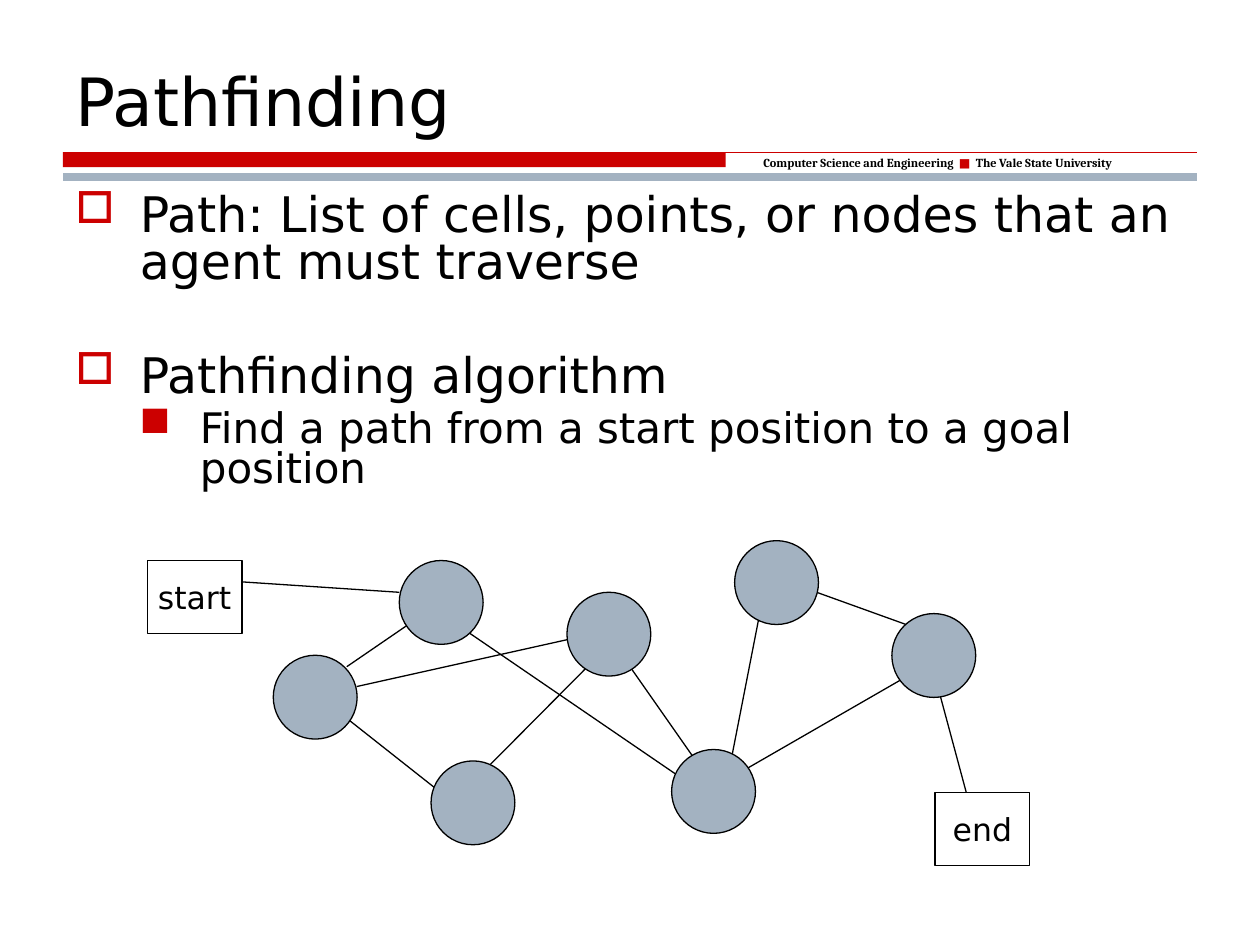
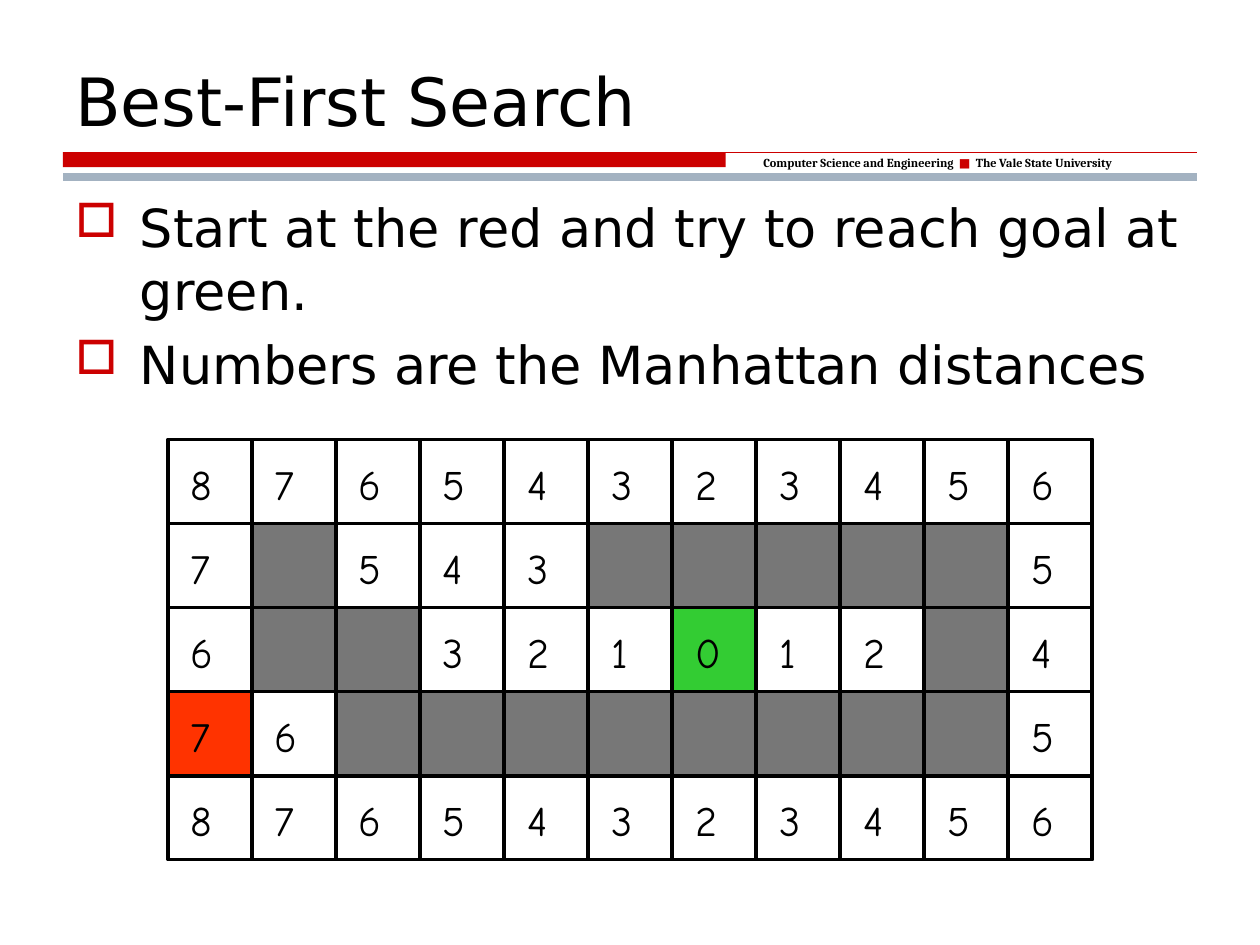
from dataclasses import dataclass

from lxml.etree import SubElement
from pptx import Presentation
from pptx.dml.color import RGBColor
from pptx.enum.shapes import MSO_CONNECTOR, MSO_SHAPE
from pptx.enum.text import MSO_ANCHOR, PP_ALIGN
from pptx.oxml.ns import qn
from pptx.util import Cm, Pt

BLACK = RGBColor(0x00, 0x00, 0x00)
RED = RGBColor(0xCC, 0x00, 0x00)
STEEL = RGBColor(0xA3, 0xB2, 0xC1)
WALL_GRAY = RGBColor(0x77, 0x77, 0x77)
START_RED = RGBColor(0xFF, 0x33, 0x00)
GOAL_GREEN = RGBColor(0x33, 0xCC, 0x33)

SANS = "DejaVu Sans"
SERIF = "Cambria"
COMIC = "Comic Neue"

LEFT, RIGHT = 1.27, 24.13
WIDTH = RIGHT - LEFT
BAND_TOP = 3.07
NODE_SIZE = 1.69
LABEL_W, LABEL_H = 1.91, 1.47

GRID_LEFT, GRID_TOP = 3.39, 8.86
CELL = 18.63 / 11
GRID_LINE = 2.25
DISTANCES = (
    "87654323456",
    "7#543#####5",
    "6##321012#4",
    "76########5",
    "87654323456",
)
START_CELL = (0, 3)
GOAL_CELL = (6, 2)


@dataclass(frozen=True)
class Level:
    margin: float
    hanging: float
    char: str
    bullet_pct: int


@dataclass(frozen=True)
class Item:
    text: str
    size: int
    level: Level
    before: float
    spacing: float = 1.0


@dataclass(frozen=True)
class Edge:
    x1: float
    y1: float
    x2: float
    y2: float


@dataclass(frozen=True)
class Point:
    x: float
    y: float


@dataclass(frozen=True)
class Label:
    text: str
    x: float
    y: float


TOPIC = Level(1.3, 1.3, "□", 90)
DETAIL = Level(2.51, 1.22, "■", 100)

PATH_ITEMS = (
    Item("Path: List of cells, points, or nodes that an agent must traverse", 28, TOPIC, 5.6, 0.8),
    Item("Pathfinding algorithm", 28, TOPIC, 38, 0.8),
    Item("Find a path from a start position to a goal position", 24, DETAIL, 4.8, 0.8),
)
SEARCH_ITEMS = (
    Item("Start at the red and try to reach goal at green.", 30, TOPIC, 6),
    Item("Numbers are the Manhattan distances", 30, TOPIC, 6),
)
EDGES = (
    Edge(4.88, 11.73, 8.05, 11.94),
    Edge(8.26, 12.57, 6.99, 13.44),
    Edge(6.99, 14.48, 8.89, 15.98),
    Edge(9.32, 15.98, 12.07, 13.21),
    Edge(12.7, 13.44, 14.17, 15.54),
    Edge(18.85, 13.64, 19.48, 15.98),
    Edge(14.61, 15.75, 18.62, 13.44),
    Edge(18.85, 12.8, 15.88, 11.73),
    Edge(7.19, 13.84, 11.86, 12.8),
    Edge(14.61, 15.98, 15.44, 11.73),
    Edge(8.89, 12.37, 14.17, 15.98),
)
NODES = (
    Point(5.51, 13.21),
    Point(8.05, 11.3),
    Point(8.69, 15.34),
    Point(11.43, 11.94),
    Point(14.81, 10.9),
    Point(13.54, 15.11),
    Point(17.98, 12.37),
)
LABELS = (Label("start", 2.97, 11.3), Label("end", 18.85, 15.98))


def style_run(r, size: float, font: str = SANS, color: RGBColor = BLACK, bold: bool = False) -> None:
    r.font.size = Pt(size)
    r.font.name = font
    r.font.color.rgb = color
    r.font.bold = bold


def add_line(s, edge: Edge, color: RGBColor = BLACK, width: float = 0.75) -> None:
    line = s.shapes.add_connector(
        MSO_CONNECTOR.STRAIGHT, Cm(edge.x1), Cm(edge.y1), Cm(edge.x2), Cm(edge.y2))
    line.line.color.rgb = color
    line.line.width = Pt(width)
    SubElement(line._element.spPr, qn("a:effectLst"))


def add_box(s, kind: MSO_SHAPE, x: float, y: float, w: float, h: float,
            fill: RGBColor | None = None, line: RGBColor | None = BLACK, width: float = 0.75):
    sp = s.shapes.add_shape(kind, Cm(x), Cm(y), Cm(w), Cm(h))
    sp.shadow.inherit = False
    if fill is None:
        sp.fill.background()
    else:
        sp.fill.solid()
        sp.fill.fore_color.rgb = fill
    if line is None:
        sp.line.fill.background()
    else:
        sp.line.color.rgb = line
        sp.line.width = Pt(width)
    return sp


def add_text_frame(s, x: float, y: float, w: float, h: float):
    tf = s.shapes.add_textbox(Cm(x), Cm(y), Cm(w), Cm(h)).text_frame
    tf.word_wrap = True
    return tf


def add_text(s, text: str, x: float, y: float, w: float, h: float, size: float, font: str = SANS):
    tf = add_text_frame(s, x, y, w, h)
    tf.text = text
    style_run(tf.paragraphs[0].runs[0], size, font)
    return tf


def set_bullet(p, level: Level) -> None:
    pPr = p._p.get_or_add_pPr()
    pPr.set("marL", str(Cm(level.margin)))
    pPr.set("indent", str(-Cm(level.hanging)))
    color = SubElement(pPr, qn("a:buClr"))
    SubElement(color, qn("a:srgbClr"), val=str(RED))
    SubElement(pPr, qn("a:buSzPct"), val=str(level.bullet_pct * 1000))
    SubElement(pPr, qn("a:buChar"), char=level.char)


def add_items(s, items: tuple[Item, ...], height: float) -> None:
    tf = add_text_frame(s, LEFT, 3.81, WIDTH, height)
    for i, item in enumerate(items):
        p = tf.add_paragraph() if i else tf.paragraphs[0]
        p.text = item.text
        p.line_spacing = item.spacing
        p.space_before = Pt(item.before)
        set_bullet(p, item.level)
        style_run(p.runs[0], item.size)


def add_band(s) -> None:
    add_box(s, MSO_SHAPE.RECTANGLE, LEFT, BAND_TOP, 13.36, 0.3, RED, None)
    add_line(s, Edge(LEFT, BAND_TOP, RIGHT, BAND_TOP), RED)
    p = add_text_frame(s, 15.14, 3, 8.66, 0.56).paragraphs[0]
    for text, font, color, bold in (
        ("Computer Science and Engineering  ", SERIF, BLACK, True),
        ("■", SANS, RED, False),
        ("  The Vale State University", SERIF, BLACK, True),
    ):
        r = p.add_run()
        r.text = text
        style_run(r, 7, font, color, bold)
    add_line(s, Edge(LEFT, 3.56, RIGHT, 3.56), STEEL, 4.5)


def add_slide(prs, title: str):
    s = prs.slides.add_slide(prs.slide_layouts[6])
    add_band(s)
    tf = add_text(s, title, LEFT, 0.64, WIDTH, 2.31, 38)
    tf.vertical_anchor = MSO_ANCHOR.BOTTOM
    return s


def add_graph(s) -> None:
    for edge in EDGES:
        add_line(s, edge)
    for node in NODES:
        add_box(s, MSO_SHAPE.OVAL, node.x, node.y, NODE_SIZE, NODE_SIZE, STEEL)
    for label in LABELS:
        tf = add_box(s, MSO_SHAPE.RECTANGLE, label.x, label.y, LABEL_W, LABEL_H).text_frame
        tf.text = label.text
        tf.word_wrap = False
        tf.vertical_anchor = MSO_ANCHOR.MIDDLE
        tf.paragraphs[0].alignment = PP_ALIGN.CENTER
        style_run(tf.paragraphs[0].runs[0], 18)


def add_grid(s) -> None:
    cols, rows = len(DISTANCES[0]), len(DISTANCES)
    right, bottom = GRID_LEFT + cols * CELL, GRID_TOP + rows * CELL
    add_box(s, MSO_SHAPE.RECTANGLE, GRID_LEFT, GRID_TOP, cols * CELL, rows * CELL, width=GRID_LINE)
    for col in range(1, cols):
        x = GRID_LEFT + col * CELL
        add_line(s, Edge(x, GRID_TOP, x, bottom), width=GRID_LINE)
    for row in range(1, rows):
        y = GRID_TOP + row * CELL
        add_line(s, Edge(GRID_LEFT, y, right, y), width=GRID_LINE)

    special = {START_CELL: START_RED, GOAL_CELL: GOAL_GREEN}
    for row, values in enumerate(DISTANCES):
        for col, value in enumerate(values):
            x, y = GRID_LEFT + col * CELL, GRID_TOP + row * CELL
            fill = WALL_GRAY if value == "#" else special.get((col, row))
            if fill is not None:
                add_box(s, MSO_SHAPE.RECTANGLE, x, y, CELL, CELL, fill, width=GRID_LINE)
            if value != "#":
                add_text(s, value, x + 0.21, y + 0.26, 1.02, 1.27, 24, COMIC)


def main() -> None:
    prs = Presentation()
    prs.slide_width, prs.slide_height = Cm(25.4), Cm(19.05)

    s = add_slide(prs, "Pathfinding")
    add_items(s, PATH_ITEMS, 6.55)
    add_graph(s)

    s = add_slide(prs, "Best-First Search")
    add_items(s, SEARCH_ITEMS, 14.6)
    add_grid(s)

    prs.save("out.pptx")


if __name__ == "__main__":
    main()
